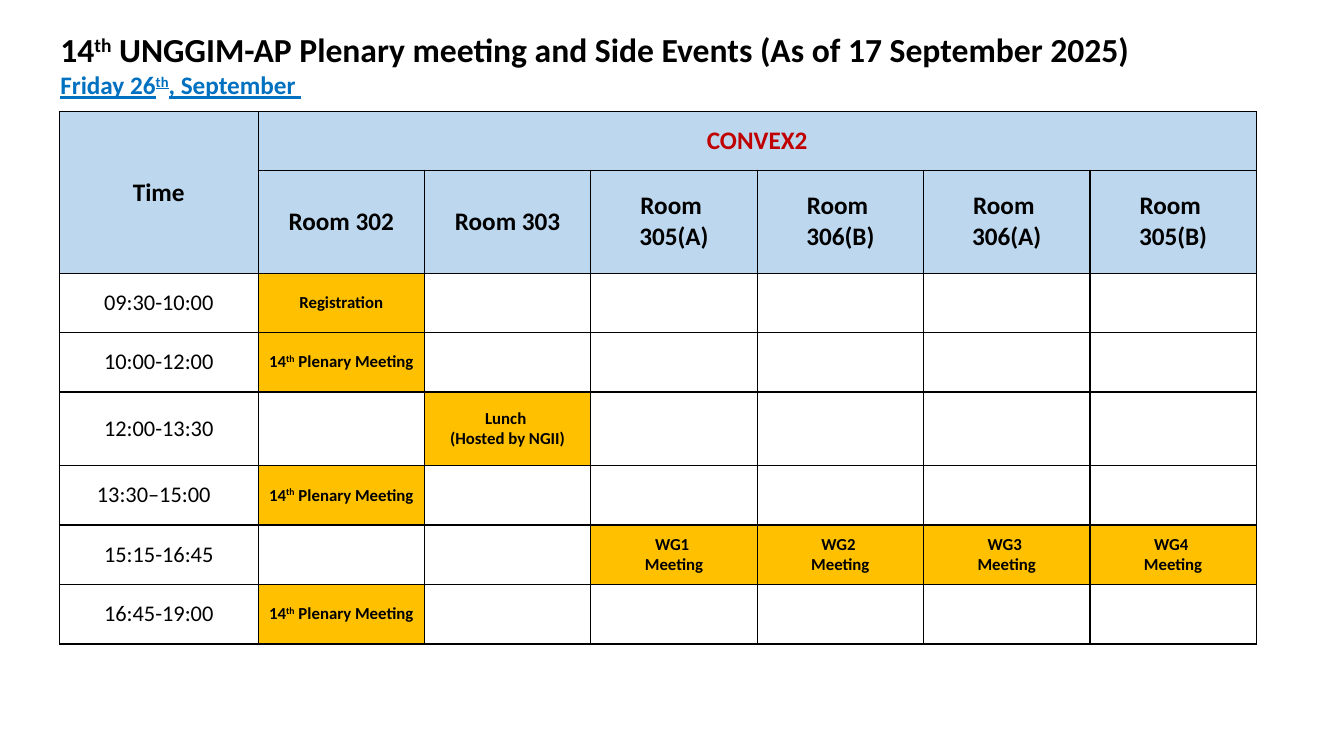
from lxml import etree
from pptx import Presentation
from pptx.dml.color import RGBColor
from pptx.enum.text import MSO_ANCHOR, PP_ALIGN
from pptx.oxml.ns import qn
from pptx.util import Inches, Pt

CENTER, LEFT = PP_ALIGN.CENTER, PP_ALIGN.LEFT
MIDDLE = MSO_ANCHOR.MIDDLE

FONT = "Calibri"
COLORS = {
    "text": "000000",
    "date": "0070C0",
    "venue": "C00000",
    "header": "BDD7EE",
    "event": "FFC000",
    "empty": "FFFFFF",
    "border": "000000",
}

ROOMS = ["Room 302", "Room 303", "Room \n305(A)", "Room \n306(B)",
         "Room \n306(A)", "Room \n305(B)"]
PLENARY = "14^th^ Plenary Meeting"
# Each session: time, row height, events by column number
SESSIONS = [
    ("09:30-10:00", 0.59, {1: "Registration"}),
    ("10:00-12:00", 0.59, {1: PLENARY}),
    ("12:00-13:30", 0.73, {2: "Lunch \n(Hosted by NGII)"}),
    ("13:30–15:00  ", 0.59, {1: PLENARY}),
    ("15:15-16:45", 0.59, {group + 2: f"WG{group} \nMeeting" for group in range(1, 5)}),
    ("16:45-19:00", 0.59, {1: PLENARY}),
]
HEADER_HEIGHTS = [0.58, 1.02]
COLUMN_WIDTHS = [1.97] + [1.65] * len(ROOMS)


def write_para(para, text, size=18, color="text", bold=True, underline=False, align=CENTER):
    """Fill a paragraph; text between carets becomes superscript."""
    para.alignment = align
    for index, part in enumerate(text.split("^")):
        span = para.add_run()
        span.text = part
        font = span.font
        font.name, font.size, font.bold = FONT, Pt(size), bold
        font.underline = underline
        font.color.rgb = RGBColor.from_string(COLORS[color])
        if index % 2:
            span._r.get_or_add_rPr().set("baseline", "30000")


def write_text(frame, text, **style):
    for index, line in enumerate(text.split("\n")):
        para = frame.add_paragraph() if index else frame.paragraphs[0]
        write_para(para, line, **style)


def set_borders(cell):
    properties = cell._tc.get_or_add_tcPr()
    for index, side in enumerate(("a:lnL", "a:lnR", "a:lnT", "a:lnB")):
        line = etree.Element(qn(side), w=str(Pt(1)))
        fill = etree.SubElement(line, qn("a:solidFill"))
        etree.SubElement(fill, qn("a:srgbClr"), val=COLORS["border"])
        properties.insert(index, line)


def style_cell(cell, fill):
    cell.fill.solid()
    cell.fill.fore_color.rgb = RGBColor.from_string(COLORS[fill])
    cell.vertical_anchor = MIDDLE
    cell.margin_left = cell.margin_right = Inches(0.05)
    set_borders(cell)


def add_heading(page, left, top, width, height):
    box = page.shapes.add_textbox(Inches(left), Inches(top), Inches(width), Inches(height))
    frame = box.text_frame
    frame.word_wrap = True
    write_para(frame.paragraphs[0],
               "14^th^ UNGGIM-AP Plenary meeting and Side Events (As of 17 September 2025)",
               size=24, align=LEFT)
    write_para(frame.add_paragraph(), "Friday 26^th^, September ",
               color="date", underline=True, align=LEFT)


def add_schedule(page, left, top):
    heights = HEADER_HEIGHTS + [height for _, height, _ in SESSIONS]
    frame = page.shapes.add_table(
        len(heights), len(COLUMN_WIDTHS), Inches(left), Inches(top),
        Inches(sum(COLUMN_WIDTHS)), Inches(sum(heights)))
    table = frame.table
    table.first_row = table.horz_banding = False
    for column, width in zip(table.columns, COLUMN_WIDTHS):
        column.width = Inches(width)
    for row, height in zip(table.rows, heights):
        row.height = Inches(height)

    header_count = len(HEADER_HEIGHTS)
    for row_index in range(header_count):
        for cell in table.rows[row_index].cells:
            style_cell(cell, "header")
    table.cell(0, 0).merge(table.cell(1, 0))
    table.cell(0, 1).merge(table.cell(0, len(ROOMS)))
    write_text(table.cell(0, 0).text_frame, "Time")
    write_text(table.cell(0, 1).text_frame, "CONVEX2", color="venue")
    for column_index, room in enumerate(ROOMS, start=1):
        write_text(table.cell(1, column_index).text_frame, room)

    for row_index, (time, _, events) in enumerate(SESSIONS, start=header_count):
        for column_index, cell in enumerate(table.rows[row_index].cells):
            style_cell(cell, "event" if column_index in events else "empty")
            if column_index in events:
                write_text(cell.text_frame, events[column_index], size=12)
        write_text(table.cell(row_index, 0).text_frame, time, size=16, bold=False)


def main():
    deck = Presentation()
    deck.slide_width, deck.slide_height = Inches(13.33), Inches(7.5)
    page = deck.slides.add_slide(deck.slide_layouts[6])
    add_heading(page, 0.5, 0.24, 10.9, 0.81)
    add_schedule(page, 0.59, 1.11)
    deck.save("out.pptx")


if __name__ == "__main__":
    main()
